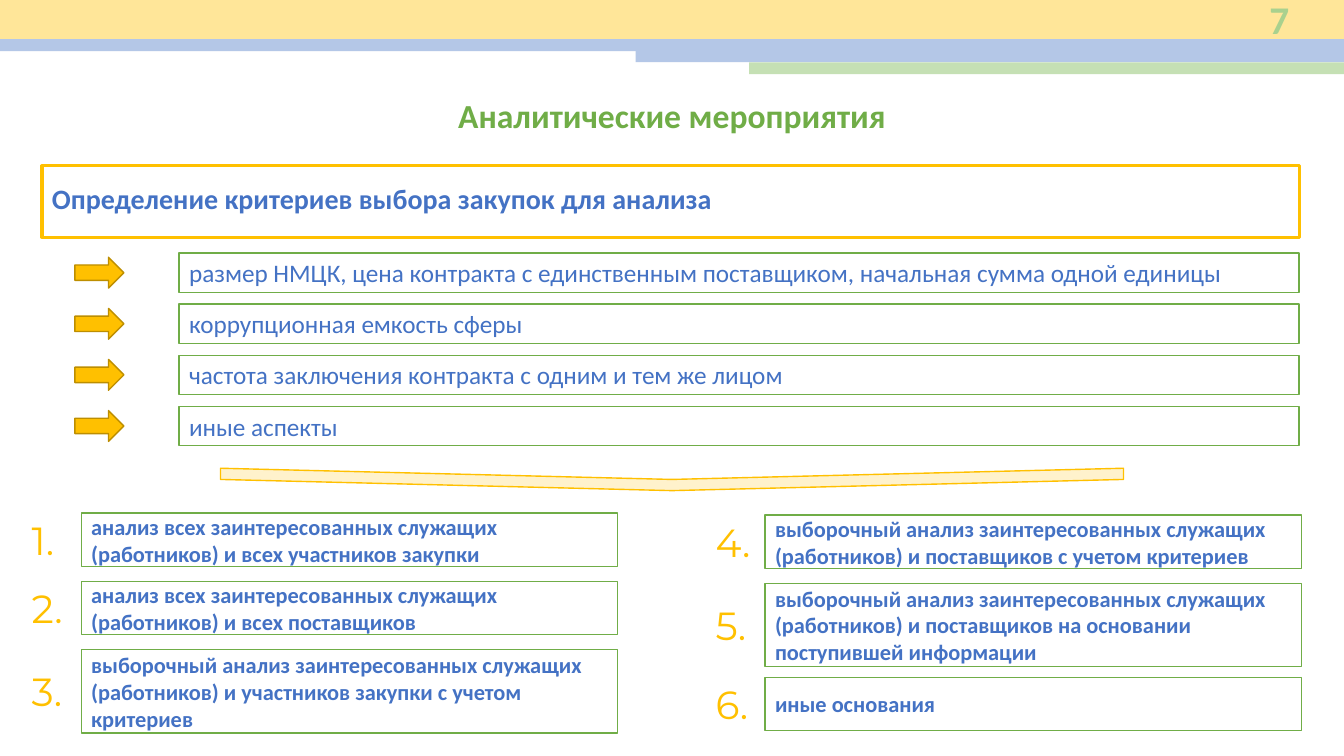
from dataclasses import dataclass

from pptx import Presentation
from pptx.dml.color import RGBColor
from pptx.enum.shapes import MSO_SHAPE
from pptx.enum.text import MSO_ANCHOR, MSO_AUTO_SIZE, PP_ALIGN
from pptx.util import Pt

RECT, ARROW, CHEVRON = MSO_SHAPE.RECTANGLE, MSO_SHAPE.RIGHT_ARROW, MSO_SHAPE.CHEVRON
TOP, MIDDLE = MSO_ANCHOR.TOP, MSO_ANCHOR.MIDDLE
LEFT, CENTER, RIGHT = PP_ALIGN.LEFT, PP_ALIGN.CENTER, PP_ALIGN.RIGHT
GROW = MSO_AUTO_SIZE.SHAPE_TO_FIT_TEXT


@dataclass(frozen=True)
class Theme:
    font: str = "Calibri"
    digit: str = "Montserrat"
    blue: str = "4472C4"
    green: str = "70AD47"
    gold: str = "FFC000"
    brown: str = "BD8E00"
    cream: str = "FFF2CC"
    sand: str = "FFE699"
    sky: str = "B4C7E7"
    mint: str = "C5E0B4"
    page: str = "A9D18E"
    big: int = 28
    title: int = 24
    head: int = 20
    item: int = 18
    note: int = 16


theme = Theme()

deck = Presentation()
deck.slide_width, deck.slide_height = Pt(960), Pt(540)
slide = deck.slides.add_slide(deck.slide_layouts[5])
shapes = slide.shapes


def draw(kind, x, y, w, h, fill=None, line=None, weight=1):
    shape = shapes.add_shape(kind, Pt(x), Pt(y), Pt(w), Pt(h))
    shape.shadow.inherit = False
    if fill:
        shape.fill.solid()
        shape.fill.fore_color.rgb = RGBColor.from_string(fill)
    else:
        shape.fill.background()
    if line:
        shape.line.color.rgb = RGBColor.from_string(line)
        shape.line.width = Pt(weight)
    else:
        shape.line.fill.background()
    return shape


def write(shape, text, size, color, bold=False, font=theme.font, align=LEFT, anchor=MIDDLE):
    frame = shape.text_frame
    frame.text = text
    frame.word_wrap = True
    frame.vertical_anchor = anchor
    para = frame.paragraphs[0]
    para.alignment = align
    face = para.runs[0].font
    face.name, face.size, face.bold = font, Pt(size), bold
    face.color.rgb = RGBColor.from_string(color)


# Header bands
for x, y, w, h, fill in [
    (0, 0, 960, 28, theme.sand),
    (0, 28, 960, 8.5, theme.sky),
    (454, 36, 506, 8.5, theme.sky),
    (535, 44.5, 425, 8.5, theme.mint),
]:
    draw(RECT, x, y, w, h, fill)

page = shapes.add_textbox(Pt(864), Pt(0), Pt(64), Pt(27.5))
write(page, "7", theme.big, theme.page, True, align=RIGHT)

title = shapes.title
title.left, title.top, title.width, title.height = Pt(43.5), Pt(64), Pt(873), Pt(36)
write(title, "Аналитические мероприятия", theme.title, theme.green, True, align=CENTER, anchor=TOP)
title.text_frame.auto_size = GROW

# Selection criteria
head = draw(RECT, 30, 118.5, 898, 51, line=theme.gold, weight=2.25)
write(head, "Определение критериев выбора закупок для анализа", theme.head, theme.blue, True)
head.text_frame.paragraphs[0].line_spacing = 0.8

rules = [
    "размер НМЦК, цена контракта с единственным поставщиком, начальная сумма одной единицы",
    "коррупционная емкость сферы",
    "частота заключения контракта с одним и тем же лицом",
    "иные аспекты",
]
for i, text in enumerate(rules):
    y = 180.8 + 36.5 * i
    box = draw(RECT, 128, y, 800, 28, line=theme.green)
    write(box, text, theme.item, theme.blue)
    draw(ARROW, 53.5, y + 3, 35, 22, theme.gold, theme.brown)

# Wide chevron pointing down
wedge = draw(CHEVRON, 472, 20, 16, 645, theme.cream, theme.gold)
wedge.rotation = 90

# Numbered kinds of analysis: top, height, text
sides = [
    (58, [
        (366.5, 38, "анализ всех заинтересованных служащих (работников) и всех участников закупки"),
        (415.3, 38, "анализ всех заинтересованных служащих (работников) и всех поставщиков"),
        (464, 59.5, "выборочный анализ заинтересованных служащих (работников) и участников закупки с учетом критериев"),
    ]),
    (546.5, [
        (368, 38, "выборочный анализ заинтересованных служащих (работников) и поставщиков с учетом критериев"),
        (416.7, 59.5, "выборочный анализ заинтересованных служащих (работников) и поставщиков на основании поступившей информации"),
        (483.8, 38, "иные основания"),
    ]),
]
count = 0
for x, notes in sides:
    for y, h, text in notes:
        count += 1
        box = draw(RECT, x, y, 383, h, line=theme.green)
        write(box, text, theme.note, theme.blue, True)
        mark = shapes.add_textbox(Pt(x - 42.4), Pt(y + h / 2 - 20.6), Pt(61), Pt(41.2))
        write(mark, f"{count}.", theme.big, theme.gold, font=theme.digit, anchor=TOP)
        mark.text_frame.auto_size = GROW

deck.save("out.pptx")
